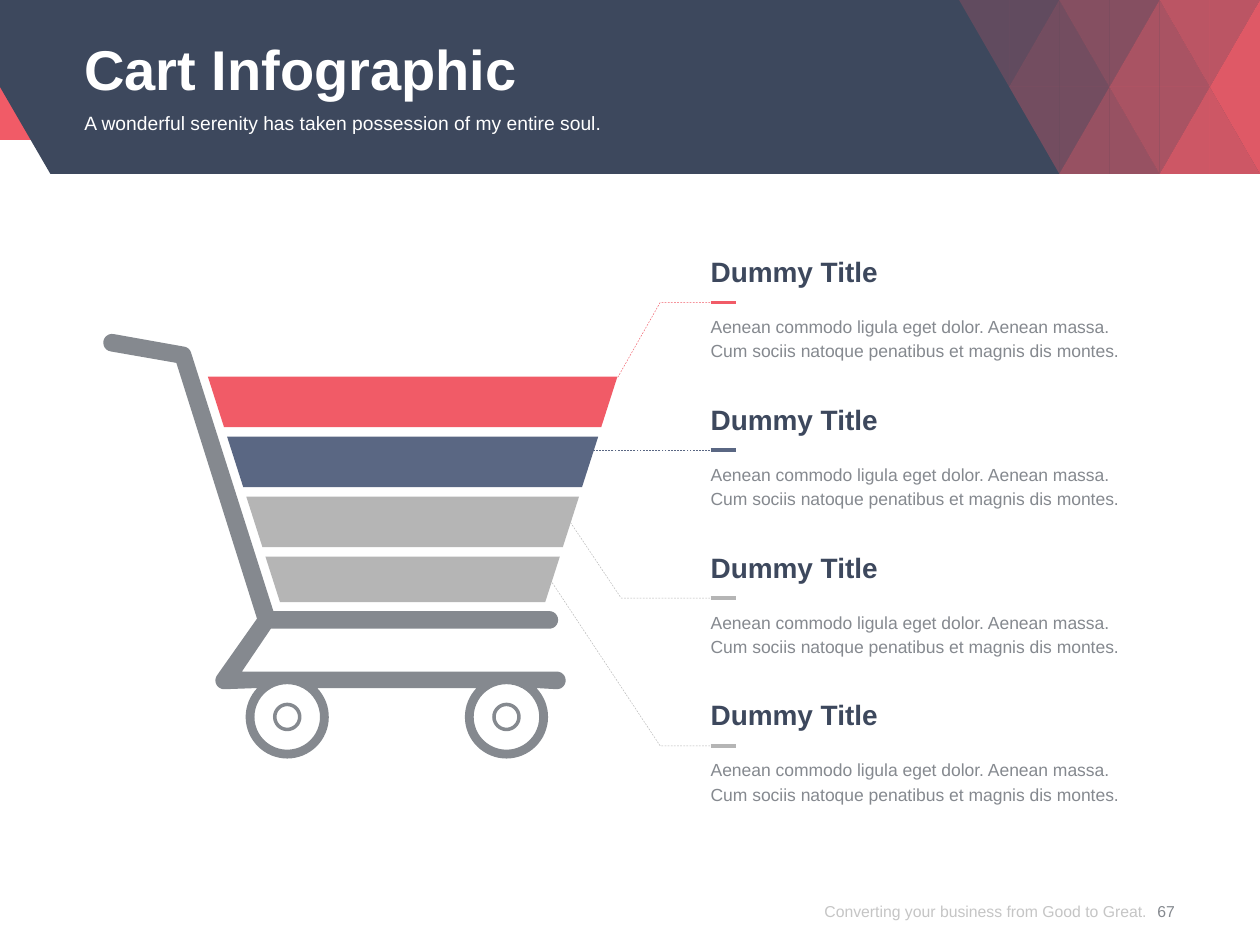
from math import cos, radians, sin

from lxml import etree
from pptx import Presentation
from pptx.dml.color import RGBColor
from pptx.enum.dml import MSO_LINE
from pptx.enum.shapes import MSO_CONNECTOR
from pptx.enum.text import MSO_ANCHOR, MSO_AUTO_SIZE, PP_ALIGN
from pptx.oxml.ns import qn
from pptx.util import Inches, Pt

DASH = MSO_LINE.DASH
STRAIGHT = MSO_CONNECTOR.STRAIGHT
TOP, MIDDLE = MSO_ANCHOR.TOP, MSO_ANCHOR.MIDDLE
LEFT, CENTER, RIGHT = PP_ALIGN.LEFT, PP_ALIGN.CENTER, PP_ALIGN.RIGHT
GROW = MSO_AUTO_SIZE.SHAPE_TO_FIT_TEXT

COLS, ROWS = 100, 75
CELL = Inches(0.1)
RED, NAVY, BLUE, SILVER = "F15B67", "3D485D", "5A6783", "B5B5B5"
GRAY, PALE, WHITE = "85898F", "8C8C8C", "FFFFFF"
HEADER = 13.8
BODY = ["Aenean commodo ligula eget dolor. Aenean massa.",
        "Cum sociis natoque penatibus et magnis dis montes."]


def grid(n):
    return round(n * CELL)


def rgb(value):
    return RGBColor.from_string(value)


def set_alpha(element, percent):
    for clr in element.iter(qn("a:srgbClr")):
        etree.SubElement(clr, qn("a:alpha")).set("val", str(percent * 1000))


def freeform(s, contours, closed=True):
    contours = [[(grid(x), grid(y)) for x, y in c] for c in contours]
    fb = s.shapes.build_freeform(*contours[0][0], scale=1.0)
    for i, points in enumerate(contours):
        if i:
            fb.move_to(*points[0])
        fb.add_line_segments(points[1:], close=closed)
    sp = fb.convert_to_shape()
    sp.shadow.inherit = False
    return sp


def filled(s, contours, color, alpha=None):
    sp = freeform(s, contours)
    sp.fill.solid()
    sp.fill.fore_color.rgb = rgb(color)
    sp.line.fill.background()
    if alpha is not None:
        set_alpha(sp._element, alpha)


def style_line(sp, color, width, dash=None):
    sp.line.color.rgb = rgb(color)
    sp.line.width = Pt(width)
    if dash is not None:
        sp.line.dash_style = dash


def add_line(s, start, end, color, width, dash=None):
    sp = s.shapes.add_connector(STRAIGHT, *map(grid, start + end))
    etree.SubElement(sp._element.spPr, qn("a:effectLst"))
    style_line(sp, color, width, dash)


def add_leader(s, points, color):
    if len(points) == 2:
        add_line(s, *points, color, 0.25, DASH)
        return
    sp = freeform(s, [points], closed=False)
    sp.fill.background()
    style_line(sp, color, 0.25, DASH)


def add_text(s, box, lines, size, color, bold=False, align=LEFT, anchor=TOP,
             spacing=None, grow=False, alpha=None):
    tf = s.shapes.add_textbox(*map(grid, box)).text_frame
    tf.word_wrap = True
    tf.margin_left = tf.margin_right = tf.margin_top = tf.margin_bottom = 0
    tf.vertical_anchor = anchor
    if grow:
        tf.auto_size = GROW
    tf.text = "\n".join(lines)
    for p in tf.paragraphs:
        p.alignment = align
        if spacing:
            p.line_spacing = Pt(spacing)
        for r in p.runs:
            r.font.name = "Arial"
            r.font.size = Pt(size)
            r.font.bold = bold
            r.font.color.rgb = rgb(color)
            if alpha is not None:
                set_alpha(r._r, alpha)


def add_header(s):
    filled(s, [[(0, 0), (COLS, 0), (COLS, 11.1), (0, 11.1)]], RED)
    filled(s, [[(0, 0), (COLS, 0), (COLS, HEADER), (4, HEADER), (0, HEADER / 2)]], NAVY)
    w, h = 3.98, HEADER / 2
    facets = [(1, 0, 20), (2, 0, 30), (3, 0, 40), (4, 0, 60), (5, 0, 70), (6, 0, 90),
              (2, 1, 30), (3, 1, 50), (4, 1, 60), (5, 1, 80), (6, 1, 90)]
    for col, row, alpha in facets:
        down = (col + row) % 2
        apex, base = (row + down) * h, (row + 1 - down) * h
        x = COLS - (6 - col) * w
        for side in (-w, w):
            if x + side <= COLS:
                filled(s, [[(x, apex), (x, base), (x + side, base)]], RED, alpha)
    add_text(s, (6.7, 1.9, 86.6, 6.5), ["Cart Infographic"], 32, WHITE,
             bold=True, anchor=MIDDLE, spacing=42)
    add_text(s, (6.7, 8.8, 86.6, 3.9),
             ["A wonderful serenity has taken possession of my entire soul."], 11, WHITE)


def add_footer(s):
    add_text(s, (60.4, 69.6, 30.6, 5.4), ["Converting your business from Good to Great."],
             9, PALE, align=RIGHT, anchor=MIDDLE, alpha=50)
    add_text(s, (90.2, 69.6, 4.7, 5.4), ["67"], 9, GRAY, align=CENTER, anchor=MIDDLE)


def add_basket(s, colors):
    top, slope = 29.9, 0.32
    for i, color in enumerate(colors):
        y1 = top + 4.76 * i
        y2 = min(y1 + 4, 47.8)
        in1, in2 = slope * (y1 - top), slope * (y2 - top)
        filled(s, [[(16.5 + in1, y1), (49 - in1, y1), (49 - in2, y2), (16.5 + in2, y2)]],
               color)


def arc(cx, cy, radius, start, end, steps=12):
    angles = [radians(start + (end - start) * i / steps) for i in range(steps + 1)]
    return [(cx + radius * cos(a), cy + radius * sin(a)) for a in angles]


def add_cart(s):
    wheels, axle, tube = (22.8, 40.2), 56.9, 0.7
    frame = [(19.2, 53.3), (21.5, 49.9)]
    frame += arc(43.6, 49.2, tube, 90, -90)
    frame += [(21.7, 48.5)]
    frame += arc(14.5, 28.2, tube, -17, -80)
    frame += arc(8.9, 27.2, tube, -80, -260)
    frame += [(14, 28.8), (20.4, 49.1)]
    frame += arc(17.8, 54, tube, 215, 90)
    for x in wheels:
        frame += arc(x, axle, 3.3, 224, -44, 48)
    frame += arc(44.2, 54, tube, 90, -90)
    rings = [arc(x, axle, radius, 0, 360, 48)
             for x in wheels for radius in (2.6, 1.13, 0.85)]
    filled(s, [frame] + rings, GRAY)


def add_item(s, y, color):
    x, width = 56.4, 36.9
    add_text(s, (x, y + 0.8, width, 3.9), BODY, 10, GRAY, spacing=14, grow=True)
    add_line(s, (x, y), (x + 2, y), color, 2)
    add_text(s, (x, y - 3.8, width, 2.7), ["Dummy Title"], 16, NAVY, bold=True, grow=True)


def main():
    prs = Presentation()
    prs.slide_width, prs.slide_height = grid(COLS), grid(ROWS)
    s = prs.slides.add_slide(prs.slide_layouts[6])
    add_header(s)
    add_footer(s)
    colors = [RED, BLUE, SILVER, SILVER]
    levels = [24 + 35.2 / 3 * i for i in range(4)]
    bends = [[(52.4, levels[0]), (49, 30)], [(47.1, levels[1])],
             [(49.3, levels[2]), (45.3, 41.5)], [(52.4, levels[3]), (43.8, 46.2)]]
    for y, bend, color in zip(levels, bends, colors):
        add_leader(s, [(58.1, y)] + bend, color)
    add_basket(s, colors)
    add_cart(s)
    for y, color in zip(levels, colors):
        add_item(s, y, color)
    prs.save("out.pptx")


if __name__ == "__main__":
    main()
